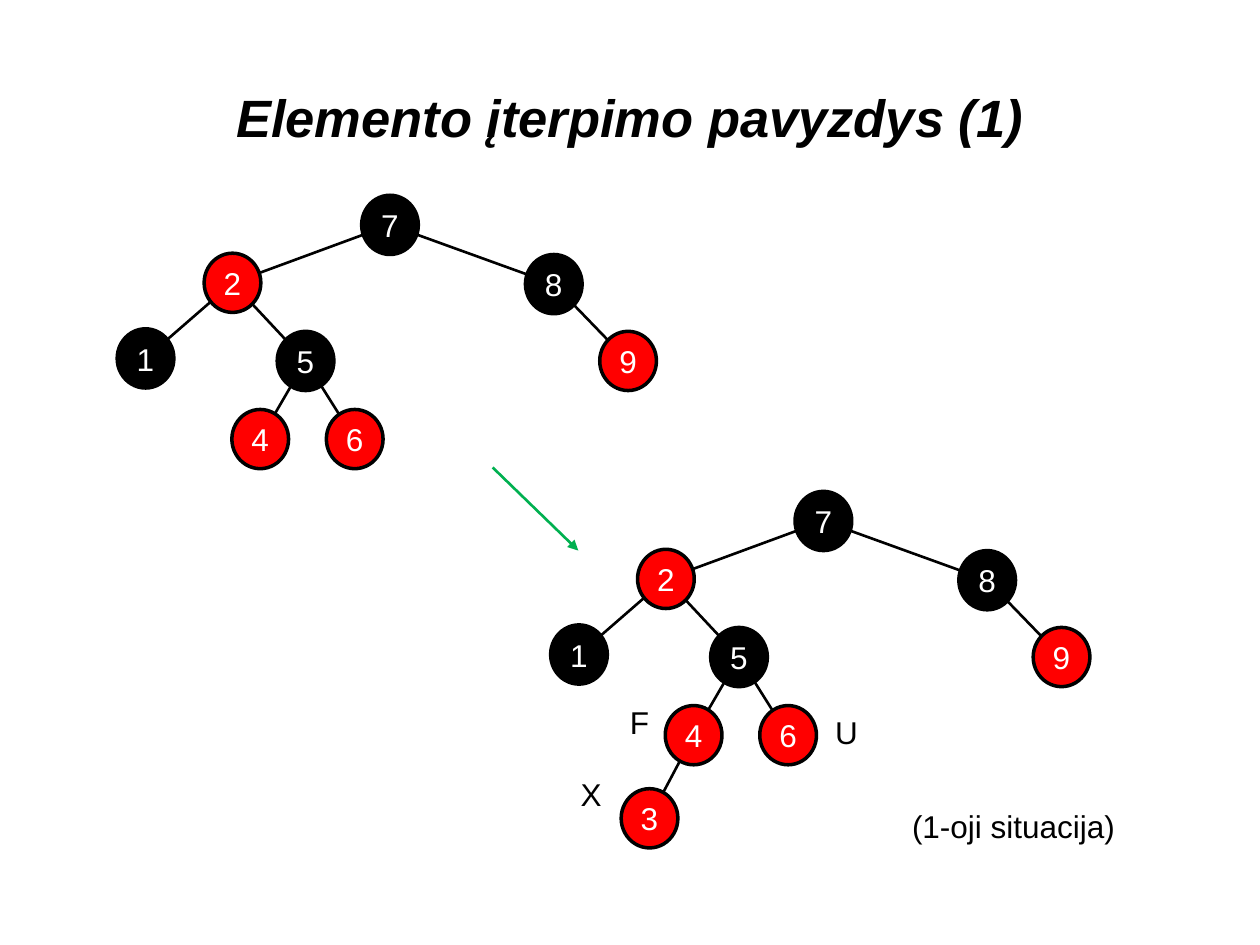
from lxml import etree
from pptx import Presentation
from pptx.dml.color import RGBColor
from pptx.enum.shapes import MSO_CONNECTOR, MSO_SHAPE
from pptx.enum.text import MSO_ANCHOR, MSO_AUTO_SIZE, PP_ALIGN
from pptx.oxml.ns import qn
from pptx.util import Inches, Pt

STRAIGHT = MSO_CONNECTOR.STRAIGHT
OVAL = MSO_SHAPE.OVAL
MIDDLE = MSO_ANCHOR.MIDDLE
CENTER = PP_ALIGN.CENTER

FONT = "Arial"
COLORS = {"black": "000000", "red": "FF0000", "white": "FFFFFF", "green": "00B050"}

TITLE = "Elemento įterpimo pavyzdys (1)"
TITLE_BOX = (5, 3, 90, 12.5)
LABELS = [
    ("F", 49, 55.3, 3.7),
    ("U", 65.3, 56.1, 3.8),
    ("X", 45.1, 61, 3.7),
    ("(1-oji situacija)", 71.4, 63.6, 18.3),
]
LABEL_HEIGHT = 4

# (key, parent, color, column and row relative to the root)
NODES = [
    ("7", None, "black", 0, 0),
    ("2", "7", "red", -12.5, 4.6),
    ("8", "7", "black", 13, 4.7),
    ("1", "2", "black", -19.4, 10.6),
    ("5", "2", "black", -6.7, 10.8),
    ("9", "8", "red", 18.9, 10.8),
    ("4", "5", "red", -10.3, 17),
    ("6", "5", "red", -2.8, 17),
]
INSERTED = ("3", "4", "red", -13.8, 23.6)
TREES = [((28.7, 15.5), NODES), ((63.1, 39), NODES + [INSERTED])]
NODE_SIZE = (4.5, 4.7)
ARROW = ((39.1, 37.1), (45.9, 43.7))

presentation = Presentation()
presentation.slide_width = Inches(10)
presentation.slide_height = Inches(7.5)
slide = presentation.slides.add_slide(presentation.slide_layouts[6])
CELL = presentation.slide_width / 100


def grid(*cells):
    return [round(cell * CELL) for cell in cells]


def color(name):
    return RGBColor.from_string(COLORS[name])


def write(shape, text, size, color_name):
    paragraph = shape.text_frame.paragraphs[0]
    paragraph.text = text
    paragraph.font.name = FONT
    paragraph.font.size = Pt(size)
    paragraph.font.color.rgb = color(color_name)
    return paragraph


def add_line(start, end, color_name):
    line = slide.shapes.add_connector(STRAIGHT, *grid(*start, *end))
    line.line.color.rgb = color(color_name)
    line.line.width = Pt(1.5)
    etree.SubElement(line._element.spPr, qn("a:effectLst"))
    return line


def add_node(left, top, key, fill):
    node = slide.shapes.add_shape(OVAL, *grid(left, top, *NODE_SIZE))
    node.shadow.inherit = False
    node.fill.solid()
    node.fill.fore_color.rgb = color(fill)
    node.line.color.rgb = color("black")
    node.line.width = Pt(2)
    node.text_frame.vertical_anchor = MIDDLE
    node.text_frame.word_wrap = False
    write(node, key, 18, "white").alignment = CENTER


def add_tree(root, nodes):
    places = {key: (root[0] + column, root[1] + row) for key, _, _, column, row in nodes}
    centers = {
        key: (left + NODE_SIZE[0] / 2, top + NODE_SIZE[1] / 2)
        for key, (left, top) in places.items()
    }
    for key, parent, *_ in nodes:
        if parent:
            add_line(centers[parent], centers[key], "black")
    for key, _, fill, *_ in nodes:
        add_node(*places[key], key, fill)


title = slide.shapes.add_textbox(*grid(*TITLE_BOX))
title.text_frame.word_wrap = True
title.text_frame.vertical_anchor = MIDDLE
heading = write(title, TITLE, 30, "black")
heading.alignment = CENTER
heading.font.bold = True
heading.font.italic = True

for root, nodes in TREES:
    add_tree(root, nodes)

for text, left, top, width in LABELS:
    label = slide.shapes.add_textbox(*grid(left, top, width, LABEL_HEIGHT))
    label.text_frame.word_wrap = False
    label.text_frame.auto_size = MSO_AUTO_SIZE.SHAPE_TO_FIT_TEXT
    write(label, text, 18, "black")

arrow = add_line(*ARROW, "green")
etree.SubElement(arrow.line._get_or_add_ln(), qn("a:tailEnd"), type="triangle")

presentation.save("out.pptx")
